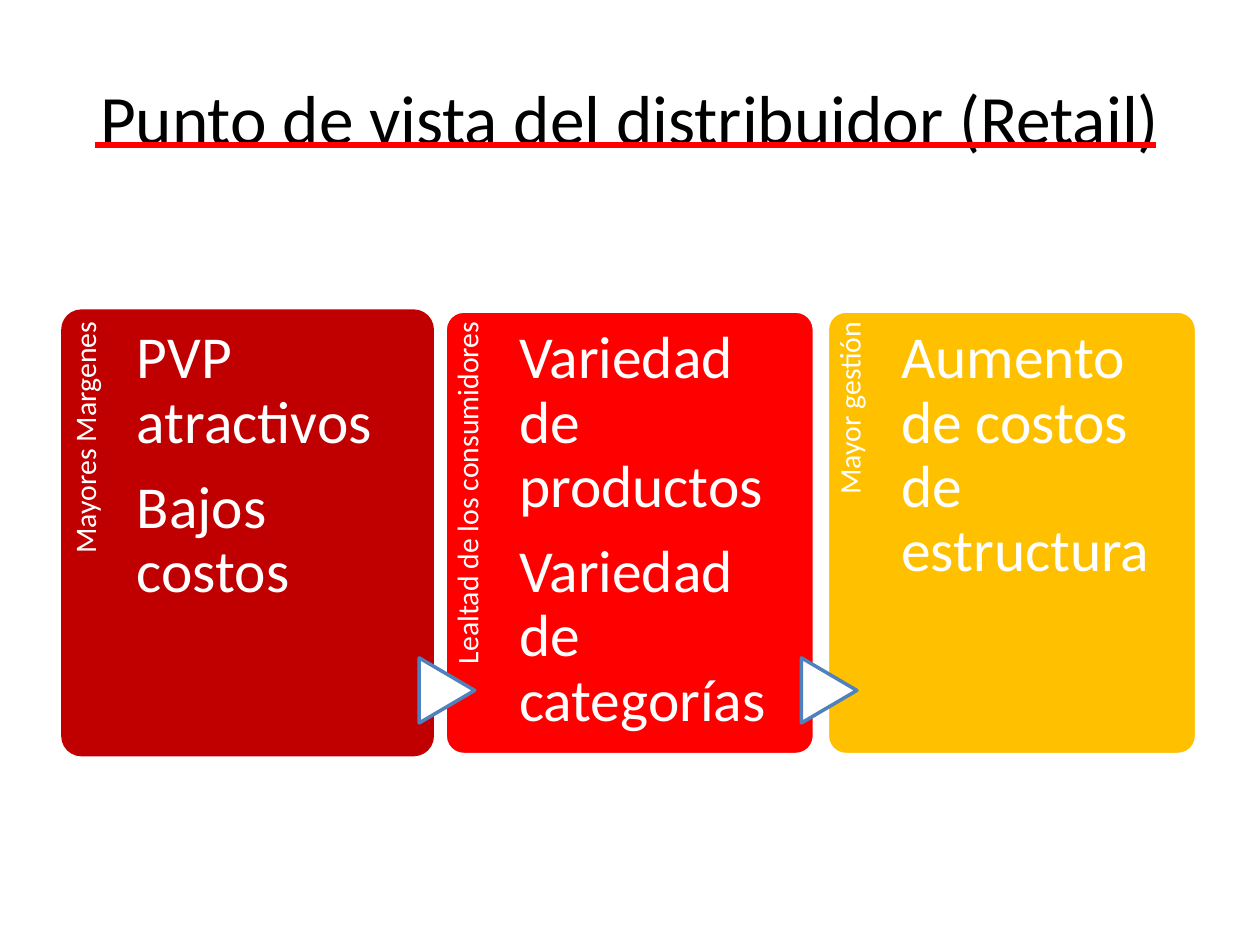
from dataclasses import dataclass

from lxml.etree import SubElement
from pptx import Presentation
from pptx.dml.color import RGBColor
from pptx.enum.shapes import MSO_CONNECTOR, MSO_SHAPE
from pptx.enum.text import MSO_ANCHOR, PP_ALIGN
from pptx.oxml.ns import qn
from pptx.util import Pt


@dataclass(frozen=True)
class Theme:
    font: str = "Calibri"
    black: str = "000000"
    white: str = "FFFFFF"
    dark_red: str = "C00000"
    red: str = "FF0000"
    amber: str = "FFC000"
    blue: str = "4F81BD"
    title_size: float = 39.6
    body_size: float = 34
    label_size: float = 17


THEME = Theme()


def add_text(s, box, lines, size, color, align=PP_ALIGN.LEFT, margins=(0, 0, 0, 0),
             anchor=MSO_ANCHOR.TOP, line_spacing=0.9, space_after=0):
    """Add a wrapped text box; box is left, top, width, height and so are margins' sides."""
    sp = s.shapes.add_textbox(*map(Pt, box))
    tf = sp.text_frame
    tf.word_wrap = True
    tf.vertical_anchor = anchor
    tf.margin_left, tf.margin_top, tf.margin_right, tf.margin_bottom = map(Pt, margins)
    for i, line in enumerate(lines):
        p = tf.paragraphs[0] if i == 0 else tf.add_paragraph()
        p.text = line
        p.alignment = align
        p.line_spacing = line_spacing
        p.space_after = Pt(space_after)
        p.font.name = THEME.font
        p.font.size = Pt(size)
        p.font.color.rgb = RGBColor.from_string(color)
    return sp


def add_filled(s, kind, box, fill, line):
    sp = s.shapes.add_shape(kind, *map(Pt, box))
    sp.shadow.inherit = False
    sp.fill.solid()
    sp.fill.fore_color.rgb = RGBColor.from_string(fill)
    sp.line.color.rgb = RGBColor.from_string(line)
    sp.line.width = Pt(2)
    return sp


prs = Presentation()
prs.slide_width, prs.slide_height = Pt(720), Pt(540)
s = prs.slides.add_slide(prs.slide_layouts[6])

add_text(s, (36, 21.6, 648, 90), ["Punto de vista del distribuidor (Retail)"],
         THEME.title_size, THEME.black, PP_ALIGN.CENTER, (7.2, 3.6, 7.2, 3.6),
         MSO_ANCHOR.MIDDLE, line_spacing=1)

# Cards: fill, outline, vertical label, body paragraphs
cards = [
    (THEME.dark_red, THEME.dark_red, "Mayores Margenes",
     ["PVP atractivos", "Bajos costos"]),
    (THEME.red, THEME.white, "Lealtad de los consumidores",
     ["Variedad de productos", "Variedad de categorías"]),
    (THEME.amber, THEME.white, "Mayor gestión",
     ["Aumento de costos de estructura"]),
]
card_left, card_top, card_w, card_h, pitch = 36, 177.8, 211, 253.4, 218.4

for i, (fill, outline, label, body) in enumerate(cards):
    left = card_left + i * pitch
    card = add_filled(s, MSO_SHAPE.ROUNDED_RECTANGLE,
                      (left, card_top, card_w, card_h), fill, outline)
    card.adjustments[0] = 0.05

    side = add_text(s, (left - 82.7, 260.7, 207.6, 42.2), [label], THEME.label_size,
                    THEME.white, PP_ALIGN.RIGHT, (0, 4.3, 5.8, 0))
    side.rotation = 270

    if i:
        arrow = add_filled(s, MSO_SHAPE.FLOWCHART_EXTRACT,
                           (left - 17.6, 378.7, 37.2, 31.7), THEME.white, THEME.blue)
        arrow.rotation = 90

    add_text(s, (left + 42.3, card_top, 157.2, card_h), body, THEME.body_size,
             THEME.white, margins=(0, 9.4, 0, 0), space_after=12)

underline = s.shapes.add_connector(MSO_CONNECTOR.STRAIGHT, Pt(54), Pt(82.8), Pt(660.4), Pt(82.8))
underline.line.color.rgb = RGBColor.from_string(THEME.red)
underline.line.width = Pt(3)
SubElement(underline._element.spPr, qn("a:effectLst"))

prs.save("out.pptx")
